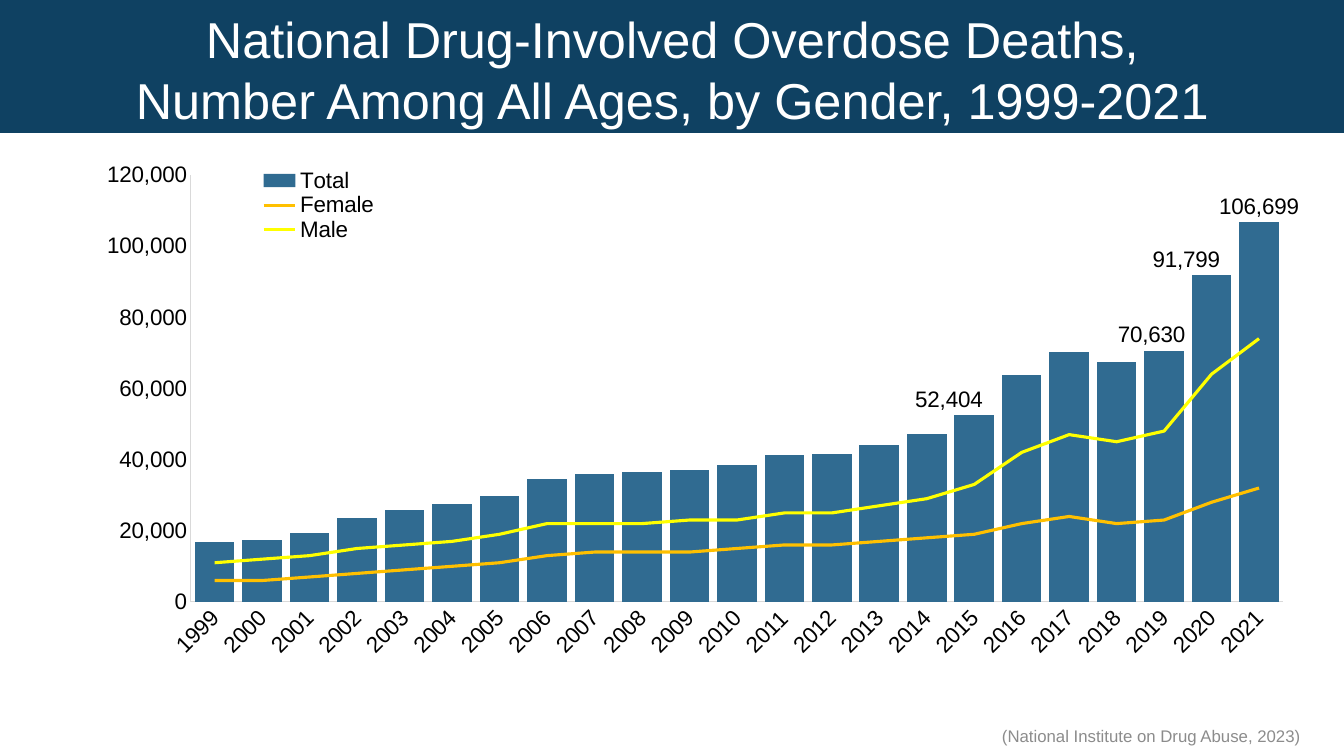
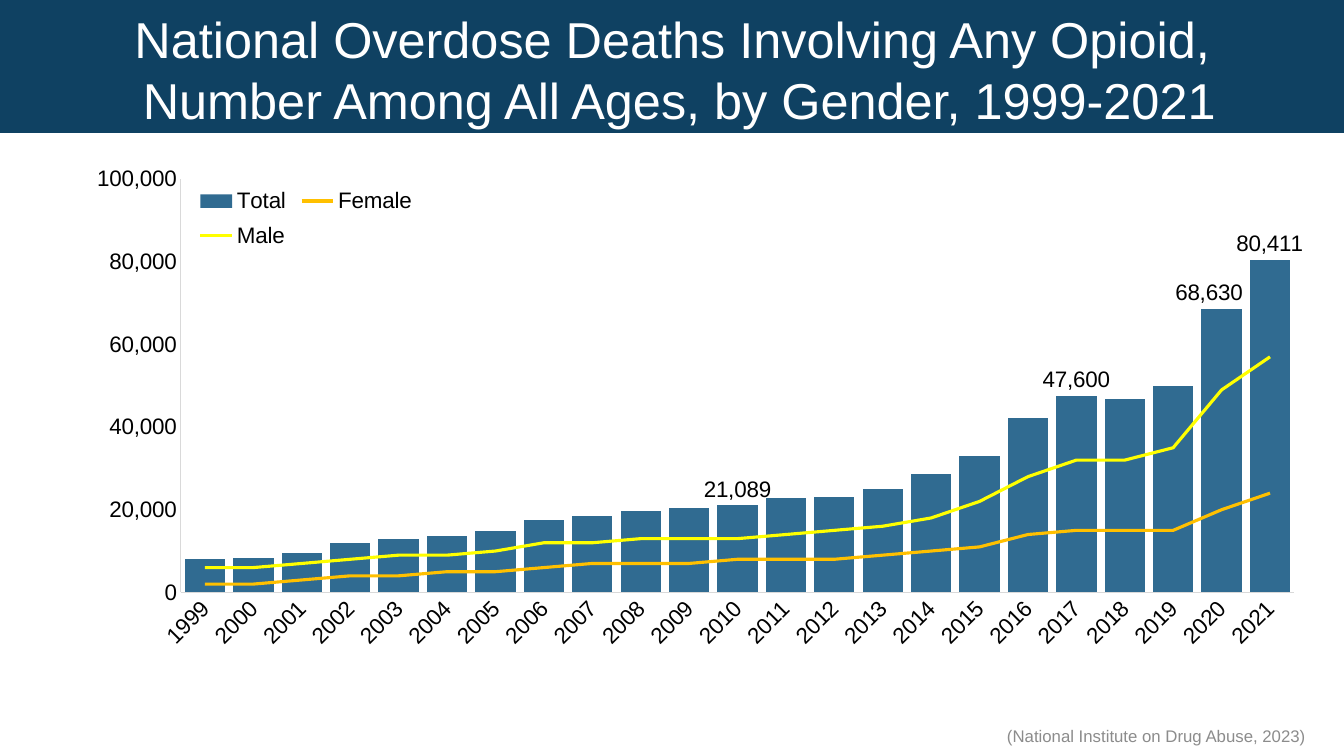
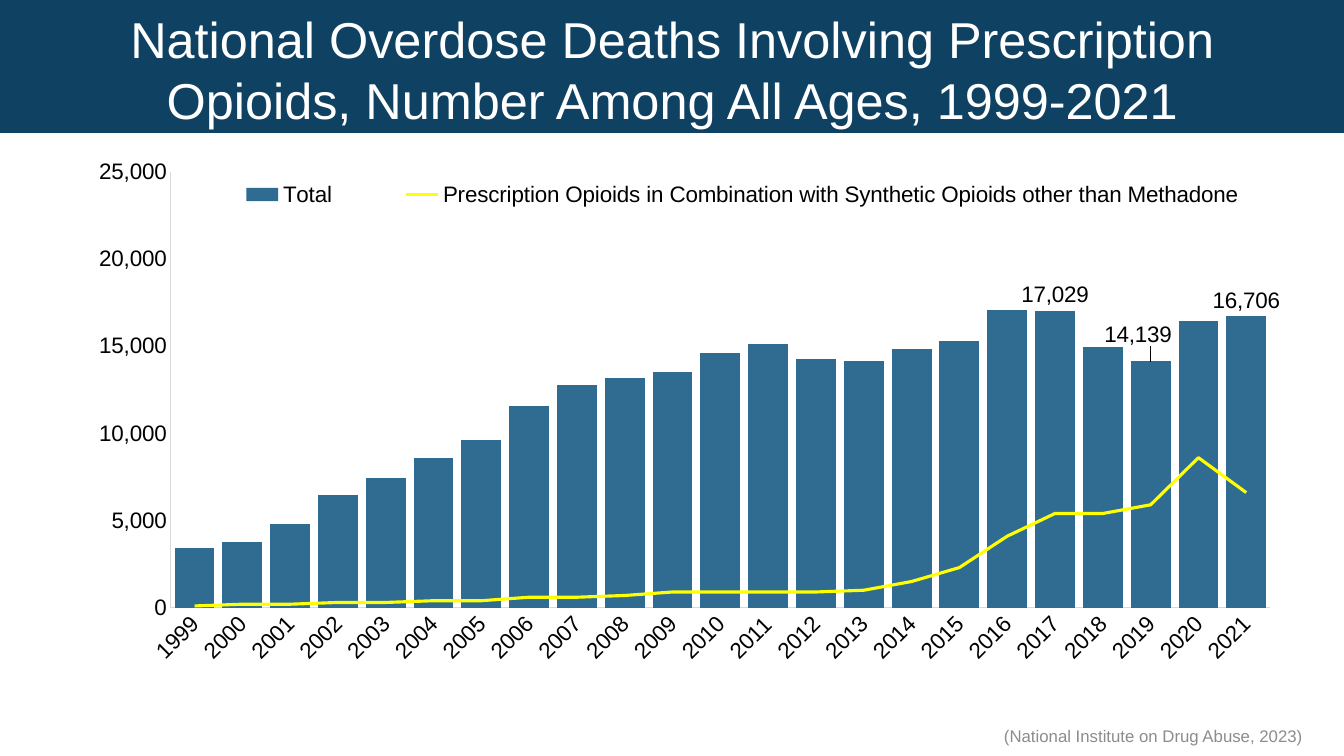
from lxml import etree
from pptx import Presentation
from pptx.chart.data import CategoryChartData
from pptx.dml.color import RGBColor
from pptx.enum.chart import (XL_CHART_TYPE, XL_LABEL_POSITION, XL_LEGEND_POSITION,
                             XL_MARKER_STYLE, XL_TICK_MARK)
from pptx.enum.shapes import MSO_SHAPE
from pptx.enum.text import MSO_ANCHOR, PP_ALIGN
from pptx.oxml.ns import qn
from pptx.util import Inches, Pt

COLUMNS = XL_CHART_TYPE.COLUMN_CLUSTERED
ABOVE = XL_LABEL_POSITION.OUTSIDE_END
BOTTOM = XL_LEGEND_POSITION.BOTTOM
NO_MARKER = XL_MARKER_STYLE.NONE
NO_TICK = XL_TICK_MARK.NONE
RECT = MSO_SHAPE.RECTANGLE
MIDDLE = MSO_ANCHOR.MIDDLE
CENTER = PP_ALIGN.CENTER

NAVY = RGBColor(0x0F, 0x41, 0x62)
STEEL = RGBColor(0x30, 0x6B, 0x91)
ORANGE = RGBColor(0xFF, 0xC0, 0x00)
YELLOW = RGBColor(0xFF, 0xFF, 0x00)
WHITE = RGBColor(0xFF, 0xFF, 0xFF)
BLACK = RGBColor(0x00, 0x00, 0x00)
GRAY = RGBColor(0x8C, 0x8C, 0x8C)
AXIS_GRAY = RGBColor(0xD9, 0xD9, 0xD9)

FONT = "Arial"
SLIDE_W, SLIDE_H = 13.33, 7.5
BAND_H = 1.31
TITLE_BOX = (0.4, 0.06, 12.54, 1.25)
CHART_BOX = (0.4, 1.51, 12.55, 5.25)
YEARS = [str(year) for year in range(1999, 2022)]
SOURCE = "(National Institute on Drug Abuse, 2023)"

SLIDES = [
    dict(
        title="National Drug-Involved Overdose Deaths,\nNumber Among All Ages, by Gender, 1999-2021",
        source_left=9.17, top=120000, step=20000, overlap=-2,
        plot=(0.119, 0.043, 0.863, 0.807), legend=(0.16, 0.03, 0.12, 0.14),
        total=[16849, 17415, 19394, 23518, 25785, 27424, 29813, 34425, 36010, 36450, 37004, 38329,
               41340, 41502, 43982, 47055, 52404, 63632, 70237, 67367, 70630, 91799, 106699],
        labels={"2015": (-0.02, 0), "2019": (-0.01, 0), "2020": (-0.02, 0), "2021": None},
        lines=[
            ("Female", ORANGE, [6, 6, 7, 8, 9, 10, 11, 13, 14, 14, 14, 15,
                                16, 16, 17, 18, 19, 22, 24, 22, 23, 28, 32]),
            ("Male", YELLOW, [11, 12, 13, 15, 16, 17, 19, 22, 22, 22, 23, 23,
                              25, 25, 27, 29, 33, 42, 47, 45, 48, 64, 74]),
        ],
        unit=1000,
    ),
    dict(
        title="National Overdose Deaths Involving Any Opioid,\n Number Among All Ages, by Gender, 1999-2021",
        source_left=9.22, top=100000, step=20000, overlap=-2,
        plot=(0.111, 0.051, 0.88, 0.781), legend=(0.12, 0.05, 0.18, 0.15),
        total=[8050, 8407, 9496, 11920, 12940, 13756, 14918, 17545, 18516, 19582, 20422, 21089,
               22784, 23166, 25052, 28647, 33091, 42249, 47600, 46802, 49860, 68630, 80411],
        labels={"2010": None, "2017": None, "2020": (-0.01, 0), "2021": None},
        lines=[
            ("Female", ORANGE, [2, 2, 3, 4, 4, 5, 5, 6, 7, 7, 7, 8,
                                8, 8, 9, 10, 11, 14, 15, 15, 15, 20, 24]),
            ("Male", YELLOW, [6, 6, 7, 8, 9, 9, 10, 12, 12, 13, 13, 13,
                              14, 15, 16, 18, 22, 28, 32, 32, 35, 49, 57]),
        ],
        unit=1000,
    ),
    dict(
        title="National Overdose Deaths Involving Prescription Opioids, Number Among All Ages, 1999-2021",
        source_left=9.19, top=25000, step=5000, overlap=-1,
        plot=(0.103, 0.037, 0.869, 0.824), legend=(0.11, 0.04, 0.89, 0.08),
        total=[3442, 3785, 4770, 6483, 7461, 8577, 9612, 11589, 12796, 13149, 13523, 14583,
               15140, 14240, 14145, 14838, 15281, 17087, 17029, 14975, 14139, 16416, 16706],
        labels={"2017": None, "2019": (-0.01, -0.02), "2021": None},
        lines=[
            ("Prescription Opioids in Combination with Synthetic Opioids other than Methadone", YELLOW,
             [1, 2, 2, 3, 3, 4, 4, 6, 6, 7, 9, 9, 9, 9, 10, 15, 23, 41, 54, 54, 59, 86, 66]),
        ],
        unit=100,
    ),
]


def set_font(font, size=16, color=BLACK):
    font.name = FONT
    font.size = Pt(size)
    font.bold = False
    font.color.rgb = color


def add_text(s, box, text, size, color):
    tb = s.shapes.add_textbox(*map(Inches, box))
    tf = tb.text_frame
    tf.word_wrap = True
    tf.vertical_anchor = MIDDLE
    tf.margin_top = tf.margin_bottom = 0
    p = tf.paragraphs[0]
    p.alignment = CENTER
    for i, line in enumerate(text.split("\n")):
        if i:
            p.add_line_break()
        r = p.add_run()
        r.text = line
        set_font(r.font, size, color)


def add_band(s):
    sp = s.shapes.add_shape(RECT, 0, 0, Inches(SLIDE_W), Inches(BAND_H))
    sp.shadow.inherit = False
    sp.fill.solid()
    sp.fill.fore_color.rgb = NAVY
    sp.line.color.rgb = NAVY
    sp.line.width = Pt(1)


def set_layout(parent, index, values, absolute=True, inner=False):
    for old in parent.findall(qn("c:layout")):
        parent.remove(old)
    layout = etree.Element(qn("c:layout"))
    manual = etree.SubElement(layout, qn("c:manualLayout"))
    settings = [("layoutTarget", "inner")] if inner else []
    if absolute:
        settings += [("xMode", "edge"), ("yMode", "edge")]
    settings += zip("xywh", values)
    for name, value in settings:
        etree.SubElement(manual, qn("c:" + name)).set("val", str(value))
    parent.insert(index, layout)


def move_to_lines(chart):
    bars = chart.element.find(".//" + qn("c:barChart"))
    lines = etree.Element(qn("c:lineChart"))
    etree.SubElement(lines, qn("c:grouping")).set("val", "standard")
    etree.SubElement(lines, qn("c:varyColors")).set("val", "0")
    for ser in bars.findall(qn("c:ser"))[1:]:
        for flag in ser.findall(qn("c:invertIfNegative")):
            ser.remove(flag)
        lines.append(ser)
    etree.SubElement(lines, qn("c:marker")).set("val", "1")
    for axis in bars.findall(qn("c:axId")):
        etree.SubElement(lines, qn("c:axId")).set("val", axis.get("val"))
    bars.addnext(lines)


def format_axes(chart, top, step):
    for axis in (chart.category_axis, chart.value_axis):
        axis.has_major_gridlines = False
        axis.major_tick_mark = axis.minor_tick_mark = NO_TICK
        axis.format.line.color.rgb = AXIS_GRAY
        axis.format.line.width = Pt(0.75)
        set_font(axis.tick_labels.font)
    values = chart.value_axis
    values.minimum_scale, values.maximum_scale, values.major_unit = 0, top, step
    values.tick_labels.number_format = "#,##0"
    values.tick_labels.number_format_is_linked = False
    body = chart.element.find(".//" + qn("c:catAx")).find(".//" + qn("a:bodyPr"))
    body.set("rot", "-2700000")
    body.set("vert", "horz")


def label_points(chart, series, labels):
    series.data_labels.show_value = False
    for year, offset in labels.items():
        index = YEARS.index(year)
        label = series.points[index].data_label
        set_font(label.font)
        label.position = ABOVE
        if offset:
            dLbl = chart.element.xpath(f".//c:dLbl[c:idx/@val='{index}']")[0]
            set_layout(dLbl, 1, offset, absolute=False)


def add_deaths_chart(s, box, total, lines, unit, labels, top, step, overlap, plot, legend):
    data = CategoryChartData(number_format="#,##0")
    data.categories = YEARS
    data.add_series("Total", total)
    for name, _, values in lines:
        data.add_series(name, [v * unit for v in values])
    chart = s.shapes.add_chart(COLUMNS, *map(Inches, box), data).chart
    chart.has_title = False
    set_font(chart.font)
    move_to_lines(chart)
    format_axes(chart, top, step)

    bar_plot, line_plot = chart.plots
    bar_plot.vary_by_categories = False
    bar_plot.gap_width = 20
    bar_plot.overlap = overlap
    bars = bar_plot.series[0]
    bars.format.fill.solid()
    bars.format.fill.fore_color.rgb = STEEL
    label_points(chart, bars, labels)
    for series, (_, color, _) in zip(line_plot.series, lines):
        series.format.line.color.rgb = color
        series.format.line.width = Pt(2.25)
        series.marker.style = NO_MARKER
        series.smooth = False

    chart.has_legend = True
    chart.legend.position = BOTTOM
    chart.legend.include_in_layout = False
    set_font(chart.legend.font)
    set_layout(chart.element.find(".//" + qn("c:legend")), 1, legend)
    set_layout(chart.element.find(".//" + qn("c:plotArea")), 0, plot, inner=True)


def add_deaths_slide(prs, title, source_left, **chart):
    s = prs.slides.add_slide(prs.slide_layouts[6])
    add_band(s)
    add_text(s, TITLE_BOX, title, size=36, color=WHITE)
    add_deaths_chart(s, CHART_BOX, **chart)
    add_text(s, (source_left, 7.1, 4.5, 0.4), SOURCE, size=12, color=GRAY)


def main():
    prs = Presentation()
    prs.slide_width, prs.slide_height = Inches(SLIDE_W), Inches(SLIDE_H)
    for content in SLIDES:
        add_deaths_slide(prs, **content)
    prs.save("out.pptx")


if __name__ == "__main__":
    main()
